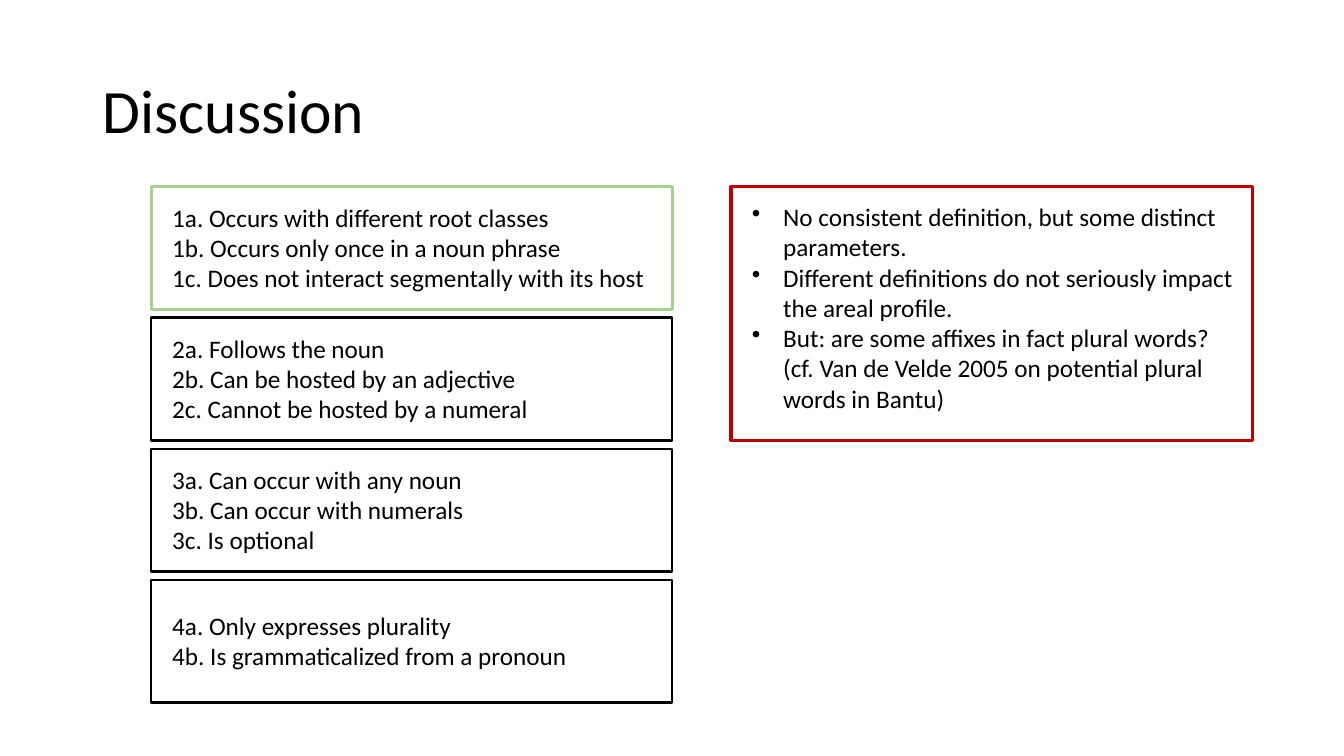
"""Build the Discussion slide with its four criteria boxes and its conclusions."""
import pptx
import pptx.dml.color
import pptx.enum.shapes
import pptx.enum.text
import pptx.oxml.ns
import pptx.util
from lxml import etree

Inches = pptx.util.Inches

COLOURS = {"text": "000000", "met": "A9D18E", "plain": "000000", "conclusion": "C00000"}

CRITERIA = [
    ["1a. Occurs with different root classes",
     "1b. Occurs only once in a noun phrase",
     "1c. Does not interact segmentally with its host"],
    ["2a. Follows the noun",
     "2b. Can be hosted by an adjective",
     "2c. Cannot be hosted by a numeral"],
    ["3a. Can occur with any noun",
     "3b. Can occur with numerals",
     "3c. Is optional"],
    ["4a. Only expresses plurality",
     "4b. Is grammaticalized from a pronoun"],
]
CONCLUSIONS = [
    "No consistent definition, but some distinct parameters.",
    "Different definitions do not seriously impact the areal profile.",
    "But: are some affixes in fact plural words? "
    "(cf. Van de Velde 2005 on potential plural words in Bantu)",
]

FIRST_TOP, ROW_STEP, ROW_HEIGHT = 1.85, 1.3, 1.22
FRAME_WIDTH, TEXT_WIDTH, TEXT_INDENT = 5.17, 5.06, 0.11
CRITERIA_LEFT, CONCLUSION_LEFT = 1.5, 7.25


def colour(name):
    return pptx.dml.color.RGBColor.from_string(COLOURS[name])


class SlideBuilder:
    def __init__(self, slide, font="Calibri"):
        self.slide = slide
        self.font = font

    def text(self, lines, left, top, width, height, size=18, spacing=None,
             middle=False, bullet=None):
        shape = self.slide.shapes.add_textbox(
            Inches(left), Inches(top), Inches(width), Inches(height))
        frame = shape.text_frame
        frame.word_wrap = True
        if middle:
            frame.vertical_anchor = pptx.enum.text.MSO_ANCHOR.MIDDLE
        frame.text = "\n".join(lines)
        for paragraph in frame.paragraphs:
            paragraph.line_spacing = spacing
            paragraph.font.name = self.font
            paragraph.font.size = pptx.util.Pt(size)
            paragraph.font.color.rgb = colour("text")
            for run in paragraph.runs:
                run.font.name = self.font
                run.font.size = pptx.util.Pt(size)
                run.font.color.rgb = colour("text")
            if bullet:
                self.bullet(paragraph, bullet)

    def bullet(self, paragraph, character, indent=0.31):
        properties = paragraph._p.get_or_add_pPr()
        properties.set("marL", str(Inches(indent)))
        properties.set("indent", str(-Inches(indent)))
        mark = etree.Element(pptx.oxml.ns.qn("a:buChar"), char=character)
        defaults = properties.find(pptx.oxml.ns.qn("a:defRPr"))
        if defaults is None:
            properties.append(mark)
        else:
            defaults.addprevious(mark)

    def frame(self, left, top, width, height, line, weight):
        shape = self.slide.shapes.add_shape(
            pptx.enum.shapes.MSO_SHAPE.RECTANGLE,
            Inches(left), Inches(top), Inches(width), Inches(height))
        shape.shadow.inherit = False
        shape.fill.background()
        shape.line.color.rgb = colour(line)
        shape.line.width = pptx.util.Pt(weight)


def main():
    presentation = pptx.Presentation()
    presentation.slide_width = Inches(13.33)
    presentation.slide_height = Inches(7.5)
    builder = SlideBuilder(presentation.slides.add_slide(presentation.slide_layouts[6]))

    builder.text(["Discussion"], 0.92, 0.4, 11.5, 1.45, size=44, spacing=0.9, middle=True)

    for row, criteria in enumerate(CRITERIA):
        top = FIRST_TOP + row * ROW_STEP
        text_height = 0.11 + 0.3 * len(criteria)
        line, weight = ("met", 2.25) if row == 0 else ("plain", 1.5)
        builder.text(criteria, CRITERIA_LEFT + TEXT_INDENT,
                     top + (ROW_HEIGHT - text_height) / 2, TEXT_WIDTH, text_height)
        builder.frame(CRITERIA_LEFT, top, FRAME_WIDTH, ROW_HEIGHT, line, weight)

    builder.frame(CONCLUSION_LEFT, FIRST_TOP, FRAME_WIDTH, ROW_STEP + ROW_HEIGHT,
                  "conclusion", 2.25)
    builder.text(CONCLUSIONS, CONCLUSION_LEFT + TEXT_INDENT, FIRST_TOP + 0.1,
                 TEXT_WIDTH, 2.22, bullet="•")

    presentation.save("out.pptx")


if __name__ == "__main__":
    main()
